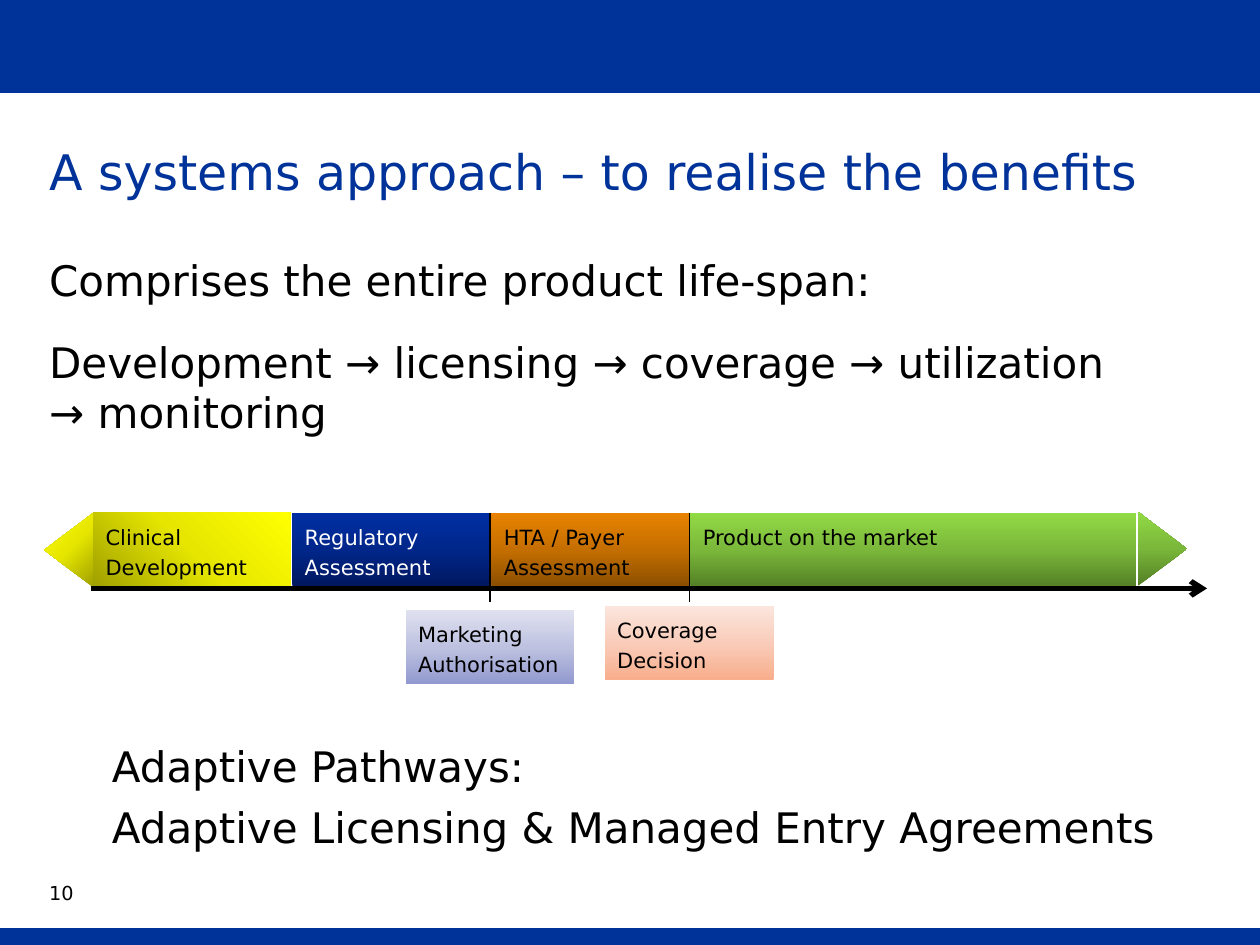
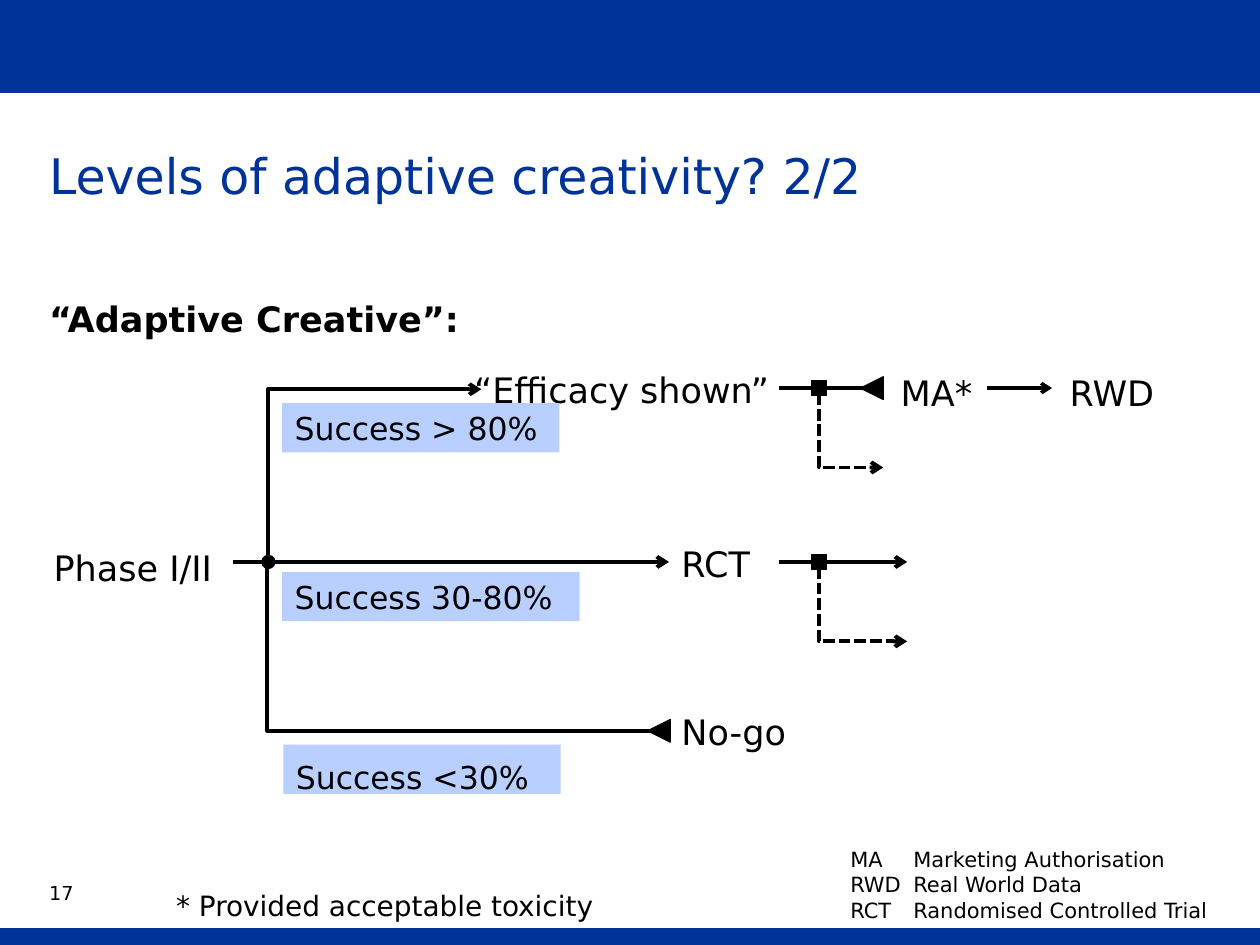
from copy import deepcopy
from dataclasses import dataclass
from typing import NamedTuple

from lxml import etree
from pptx import Presentation, util as u
from pptx.dml.color import RGBColor
from pptx.enum import dml, shapes, text
from pptx.oxml.ns import qn

# Grid: 100 columns by 75 rows, square cells
WIDTH, HEIGHT = u.Inches(10), u.Inches(7.5)
COLS, ROWS = 100, 75
CELL = WIDTH / COLS

FONT = "DejaVu Sans"
BLUE = RGBColor(0x00, 0x33, 0x99)
PALE = RGBColor(0xB8, 0xCF, 0xFF)
BLACK = RGBColor(0, 0, 0)
WHITE = RGBColor(0xFF, 0xFF, 0xFF)

# Three-stop blends, from dark to light
GREEN = ("537E25", "7AB73A", "92DA46")
AMBER = ("8A4E00", "C46E00", "E98300")
NAVY = ("00175E", "002689", "002FA4")
GOLD = ("A0A000", "E6E600", "FFFF00")
LILAC = ("9299CF", "BEC2E0", "E0E1EF")
PEACH = ("F8AD8B", "F9CCBA", "FBE6DD")

KIND = shapes.MSO_SHAPE
LEFT, MID = text.PP_ALIGN.LEFT, text.PP_ALIGN.CENTER


class Box(NamedTuple):
    x: float
    y: float
    w: float
    h: float


class Spot(NamedTuple):
    x: float
    y: float


@dataclass
class Style:
    size: float
    ink: RGBColor = BLACK
    bold: bool = False
    align: int = LEFT
    lead: object = 1.0
    after: float = 0
    tabs: tuple = ()


@dataclass
class Stage:
    box: Box
    lines: tuple
    blend: tuple
    ink: RGBColor = BLACK
    angle: float = 90


@dataclass
class Label:
    box: Box
    words: str
    style: Style
    fill: object = None


@dataclass
class Wire:
    start: Spot
    end: Spot
    width: float = 2.25
    tip: str = ""
    bend: object = None
    dash: bool = False
    ink: RGBColor = BLACK


def cells(*nums: float) -> list:
    return [round(n * CELL) for n in nums]


# Text
def write(frame, lines: tuple, style: Style) -> None:
    frame.word_wrap = True
    frame.auto_size = text.MSO_AUTO_SIZE.NONE
    frame.vertical_anchor = text.MSO_ANCHOR.TOP
    for i, line in enumerate(lines):
        para = frame.paragraphs[0] if i == 0 else frame.add_paragraph()
        props = para._p.get_or_add_pPr()
        props.set("marL", "0")
        props.set("indent", "0")
        etree.SubElement(props, qn("a:buNone"))
        if style.tabs:
            stops = etree.SubElement(props, qn("a:tabLst"))
            for pos in cells(*style.tabs):
                etree.SubElement(stops, qn("a:tab"), pos=str(pos), algn="l")
        para.alignment = style.align
        para.line_spacing = style.lead
        para.space_before = u.Pt(0)
        para.space_after = u.Pt(style.after)
        run = para.add_run()
        run.text = line
        run.font.name = FONT
        run.font.size = u.Pt(style.size)
        run.font.bold = style.bold
        run.font.color.rgb = style.ink


def inset(frame, left: float, top: float, right: float) -> None:
    frame.margin_left, frame.margin_top, frame.margin_right = cells(left, top, right)
    frame.margin_bottom = 0


def note(slide, box: Box, lines: tuple, style: Style, pad: bool = True) -> None:
    frame = slide.shapes.add_textbox(*cells(*box)).text_frame
    side = 1 if style.align == MID else 0
    inset(frame, *((1, 0.5, side) if pad else (0, 0, 0)))
    write(frame, lines, style)


def place(holder, box: Box, lines: tuple, style: Style) -> None:
    holder.left, holder.top, holder.width, holder.height = cells(*box)
    inset(holder.text_frame, 0, 0, 0)
    write(holder.text_frame, lines, style)


# Shapes and lines
def solid(slide, kind, box: Box, ink: RGBColor, turn: float = 0, edge: float = 0):
    shape = slide.shapes.add_shape(kind, *cells(*box))
    shape.shadow.inherit = False
    shape.rotation = turn
    shape.fill.solid()
    shape.fill.fore_color.rgb = ink
    if edge:
        shape.line.color.rgb = ink
        shape.line.width = u.Pt(edge)
    else:
        shape.line.fill.background()
    return shape


def blend(shape, tones: tuple, angle: float) -> None:
    shape.fill.gradient()
    shape.fill.gradient_angle = angle
    stops = shape._element.spPr.find(".//" + qn("a:gsLst"))
    stops.insert(1, deepcopy(stops[0]))
    for i, (stop, tone) in enumerate(zip(shape.fill.gradient_stops, tones)):
        stop.position = i / 2
        stop.color.rgb = RGBColor.from_string(tone)


def stage(slide, item: Stage) -> None:
    shape = solid(slide, KIND.RECTANGLE, item.box, BLUE)
    blend(shape, item.blend, item.angle)
    inset(shape.text_frame, 1, 0.5, 0)
    write(shape.text_frame, item.lines, Style(12, item.ink, lead=1.2))


def point(slide, box: Box, tones: tuple, turn: float, angle: float) -> None:
    blend(solid(slide, KIND.FLOWCHART_MERGE, box, BLUE, turn), tones, angle)


def label(slide, item: Label) -> None:
    if item.fill is not None:
        solid(slide, KIND.RECTANGLE, item.box, item.fill)
    note(slide, item.box, (item.words,), item.style)


def draw(slide, wire: Wire):
    bent = wire.bend is not None
    kind = shapes.MSO_CONNECTOR.ELBOW if bent else shapes.MSO_CONNECTOR.STRAIGHT
    link = slide.shapes.add_connector(kind, *cells(*wire.start, *wire.end))
    link.line.color.rgb = wire.ink
    link.line.width = u.Pt(wire.width)
    if wire.dash:
        link.line.dash_style = dml.MSO_LINE.SQUARE_DOT
    props = link._element.spPr
    if bent:
        geom = props.find(qn("a:prstGeom"))
        guides = geom.find(qn("a:avLst"))
        if guides is None:
            guides = etree.SubElement(geom, qn("a:avLst"))
        share = round(wire.bend * 100000)
        etree.SubElement(guides, qn("a:gd"), name="adj1", fmla=f"val {share}")
    if wire.tip:
        etree.SubElement(props.find(qn("a:ln")), qn("a:tailEnd"), type=wire.tip)
    etree.SubElement(props, qn("a:effectLst"))
    return link


def stop(slide, y: float, right: float) -> None:
    """Triangle that closes a branch, its base at the right."""
    solid(slide, KIND.ISOSCELES_TRIANGLE, Box(right - 1.8, y - 0.9, 1.8, 1.8),
          BLACK, 270, 0.75)


def node(slide, y: float, out: Wire) -> None:
    """Decision square with a lead-in, a way out and a dashed side branch."""
    square = solid(slide, KIND.RECTANGLE, Box(64.4, y - 0.6, 1.2, 1.2), BLACK, edge=0.75)
    draw(slide, Wire(Spot(61.8, y), Spot(64.4, y))).end_connect(square, 1)
    draw(slide, out).begin_connect(square, 3)
    draw(slide, Wire(Spot(65, y + 0.4), Spot(out.end.x, y + 6.3), tip="arrow",
                     bend=0, dash=True))


# Shared page: bands, title, body, number
def page(deck, title: str, head: Style, area: Box, body: tuple, main: Style, num: str):
    slide = deck.slides.add_slide(deck.slide_layouts[1])
    for top, tall, edge in ((73.6, 1.4, 73.6), (0, 7.4, 7.4)):
        solid(slide, KIND.RECTANGLE, Box(0, top, COLS, tall), BLUE)
        draw(slide, Wire(Spot(0, edge), Spot(COLS, edge), 0.25, ink=WHITE))
    place(slide.shapes.title, Box(3.9, 11.2, 92.5, 10.4), (title,), head)
    place(slide.placeholders[1], area, body, main)
    note(slide, Box(3.9, 70.1, 3.4, 2.6), (num,), Style(11, lead=u.Pt(12)), pad=False)
    return slide


def systems(deck) -> None:
    slide = page(
        deck, "A systems approach – to realise the benefits", Style(28, BLUE, after=18),
        Box(3.9, 20.2, 86.3, 33.9),
        ("Comprises the entire product life-span:",
         "Development → licensing → coverage → utilization → monitoring"),
        Style(24, after=18), "10")

    # Life-span band
    top, tall, wide, step = 40.7, 5.9, 15.7, 15.8
    first = 7.4
    point(slide, Box(89.3, 41.6, 5.9, 3.9), GREEN, 270, 0)
    point(slide, Box(2.5, 41.7, 5.9, 3.9), GOLD, 90, 225)
    steps = (
        (("Clinical", "Development"), GOLD, BLACK, 45),
        (("Regulatory", "Assessment"), NAVY, WHITE, 90),
        (("HTA / Payer", "Assessment"), AMBER, BLACK, 90),
    )
    for i, (lines, tones, ink, angle) in enumerate(steps):
        box = Box(first + i * step, top, wide, tall)
        stage(slide, Stage(box, lines, tones, ink, angle))
    stage(slide, Stage(Box(first + 3 * step, top, 35.4, tall),
                       ("Product on the market",), GREEN))

    # Time line with its two decisions
    draw(slide, Wire(Spot(7.2, 46.7), Spot(95.8, 46.7), 3, "arrow"))
    marks = (
        (38.9, 48.4, ("Marketing", "Authorisation"), LILAC),
        (54.7, 48.1, ("Coverage", "Decision"), PEACH),
    )
    for x, y, lines, tones in marks:
        draw(slide, Wire(Spot(x, top), Spot(x, 47.8), 0.75))
        stage(slide, Stage(Box(x - 6.7, y, 13.4, tall), lines, tones))

    note(slide, Box(7.9, 58.3, 85.4, 9.9),
         ("Adaptive Pathways:", "Adaptive Licensing & Managed Entry Agreements"),
         Style(24, after=6))


def levels(deck) -> None:
    slide = page(
        deck, "Levels of adaptive creativity? 2/2", Style(28, BLUE, lead=u.Pt(36)),
        Box(3.9, 23.6, 92.5, 6), ("“Adaptive Creative”:",), Style(20, bold=True), "17")

    # Labels
    big, mid = Style(20, lead=1.2), Style(20, align=MID, lead=1.2)
    chip, low = Style(18), Style(18, lead=1.2)
    for item in (
        Label(Box(2.5, 42.2, 16.1, 4.6), "Phase I/II", mid),
        Label(Box(36.2, 28.1, 26.3, 5), "“Efficacy shown”", mid),
        Label(Box(70.5, 28.3, 8.7, 5), "MA*", big),
        Label(Box(83.9, 28.3, 11.8, 5), "RWD", big),
        Label(Box(53.1, 41.9, 11.8, 4.6), "RCT", big),
        Label(Box(53.1, 55.2, 11.8, 4.6), "No-go", big),
        Label(Box(22.4, 32, 22, 3.9), "Success > 80%", chip, PALE),
        Label(Box(22.4, 45.4, 23.6, 3.9), "Success 30-80%", chip, PALE),
        Label(Box(22.5, 59.1, 22, 3.9), "Success <30%", low, PALE),
        Label(Box(13, 69.5, 35.7, 4.2), "* Provided acceptable toxicity", Style(16, lead=1.2)),
    ):
        label(slide, item)

    # Three branches
    high, main, base = 30.8, 44.6, 58
    for wire in (
        Wire(Spot(18.5, main), Spot(21.3, main), 2.75, "oval"),
        Wire(Spot(21.7, main), Spot(53.1, main), tip="arrow"),
        Wire(Spot(19.7, main), Spot(38.2, high + 0.1), tip="arrow", bend=0.084),
        Wire(Spot(19.3, main), Spot(53.1, base), bend=0.057),
        Wire(Spot(78.3, high), Spot(83.5, high), 2, "arrow"),
    ):
        draw(slide, wire)
    stop(slide, base, 53.2)

    # Later decisions
    node(slide, high, Wire(Spot(65.6, high), Spot(70.1, high), 2))
    stop(slide, high, 70.1)
    node(slide, main, Wire(Spot(65.6, main), Spot(72, main), tip="arrow"))

    # Key to short forms
    note(slide, Box(66.5, 66.7, 33.5, 7.1),
         ("MA\tMarketing Authorisation", "RWD\tReal World Data",
          "RCT\tRandomised Controlled Trial"),
         Style(12, tabs=(7.8, 15.7)))


def main() -> None:
    deck = Presentation()
    deck.slide_width, deck.slide_height = WIDTH, HEIGHT
    systems(deck)
    levels(deck)
    deck.save("out.pptx")


if __name__ == "__main__":
    main()
